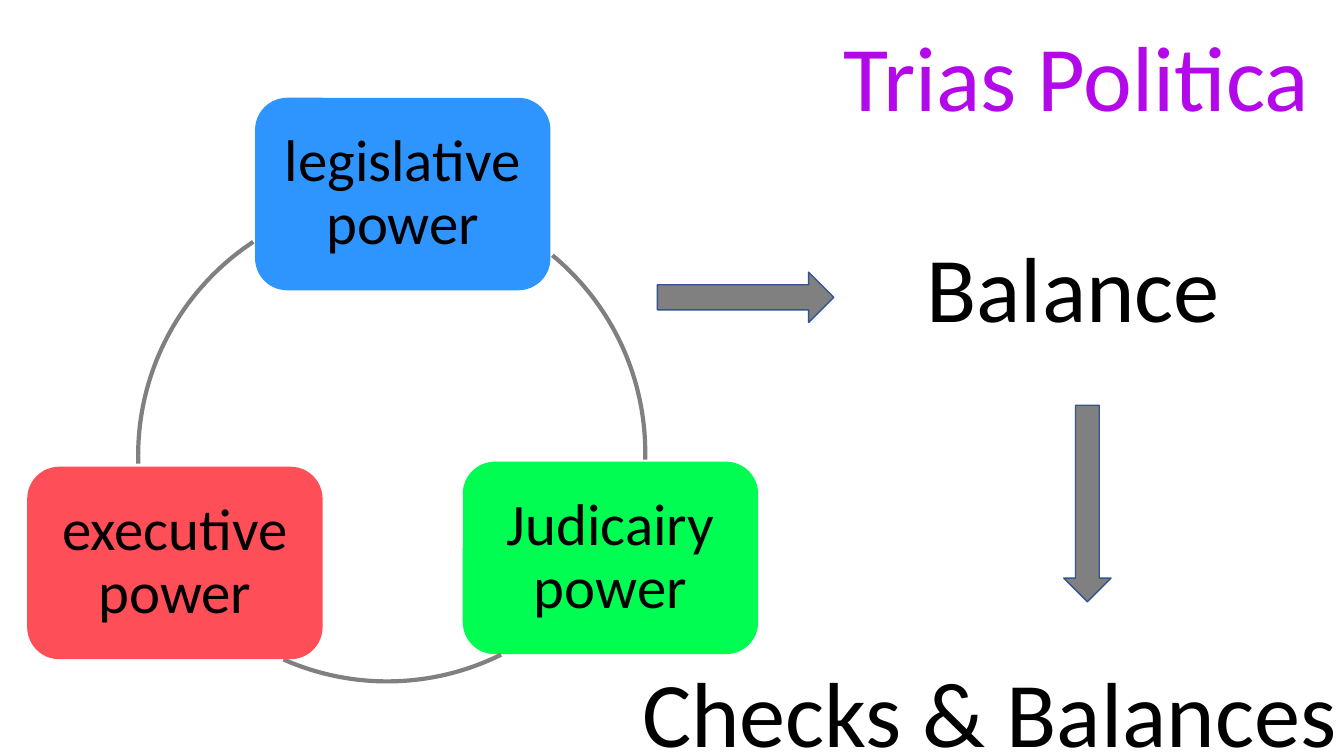
from dataclasses import dataclass

from pptx import Presentation
from pptx.dml.color import RGBColor
from pptx.enum.shapes import MSO_SHAPE
from pptx.enum.text import MSO_ANCHOR, MSO_AUTO_SIZE, PP_ALIGN
from pptx.util import Inches, Pt

ROUNDED = MSO_SHAPE.ROUNDED_RECTANGLE
ARC = MSO_SHAPE.ARC
RIGHT_ARROW = MSO_SHAPE.RIGHT_ARROW
DOWN_ARROW = MSO_SHAPE.DOWN_ARROW
MIDDLE = MSO_ANCHOR.MIDDLE
NO_AUTOFIT = MSO_AUTO_SIZE.NONE
GROW = MSO_AUTO_SIZE.SHAPE_TO_FIT_TEXT
LEFT = PP_ALIGN.LEFT
CENTER = PP_ALIGN.CENTER


@dataclass(frozen=True)
class Theme:
    font: str = "Calibri"
    title: str = "B308EA"
    text: str = "000000"
    grey: str = "808080"
    outline: str = "325491"
    legislative: str = "2E95FF"
    judiciary: str = "00FD52"
    executive: str = "FE4E57"
    large: int = 66
    medium: int = 42


class PowersSlide:
    power_size = (2.93, 1.91)
    power_inset = Inches(0.17)
    ring_diameter = 5.08

    def __init__(self, deck, theme):
        self.theme = theme
        self.page = deck.slides.add_slide(deck.slide_layouts[5])

    def set_text(self, frame, text, size, color, align=LEFT, spacing=1.0):
        frame.word_wrap = True
        para = frame.paragraphs[0]
        para.text = text
        para.alignment = align
        para.line_spacing = spacing
        para.font.name = self.theme.font
        para.font.size = Pt(size)
        para.font.color.rgb = RGBColor.from_string(color)

    def shape(self, kind, left, top, width, height, fill=None, line=None, weight=1):
        shape = self.page.shapes.add_shape(
            kind, Inches(left), Inches(top), Inches(width), Inches(height))
        shape.shadow.inherit = False
        if fill:
            shape.fill.solid()
            shape.fill.fore_color.rgb = RGBColor.from_string(fill)
        else:
            shape.fill.background()
        if line:
            shape.line.color.rgb = RGBColor.from_string(line)
            shape.line.width = Pt(weight)
        else:
            shape.line.fill.background()
        return shape

    def title(self, text, left, top, width, height):
        title = self.page.shapes.title
        title.left, title.top = Inches(left), Inches(top)
        title.width, title.height = Inches(width), Inches(height)
        frame = title.text_frame
        frame.auto_size = NO_AUTOFIT
        frame.vertical_anchor = MIDDLE
        self.set_text(frame, text, self.theme.large, self.theme.title, spacing=0.9)

    def power(self, text, left, top, fill):
        frame = self.shape(ROUNDED, left, top, *self.power_size, fill=fill).text_frame
        frame.vertical_anchor = MIDDLE
        frame.margin_left = frame.margin_right = self.power_inset
        frame.margin_top = frame.margin_bottom = self.power_inset
        self.set_text(frame, text, self.theme.medium, self.theme.text, CENTER, 0.9)

    def arc(self, left, top, start, end):
        arc = self.shape(ARC, left, top, self.ring_diameter, self.ring_diameter,
                         line=self.theme.grey, weight=3)
        for index, degrees in enumerate((start, end)):
            arc.adjustments[index] = degrees * 60000 / 100000

    def arrow(self, kind, left, top, width, height):
        self.shape(kind, left, top, width, height, self.theme.grey, self.theme.outline)

    def label(self, text, left, top, width, height):
        box = self.page.shapes.add_textbox(
            Inches(left), Inches(top), Inches(width), Inches(height))
        box.text_frame.auto_size = GROW
        self.set_text(box.text_frame, text, self.theme.large, self.theme.text)


def main():
    deck = Presentation()
    deck.slide_width, deck.slide_height = Inches(13.33), Inches(7.5)
    theme = Theme()
    slide = PowersSlide(deck, theme)

    slide.title("Trias Politica", 8.27, -0.02, 5.05, 1.65)

    cycle = [
        (("legislative power", 2.53, 0.97, theme.legislative), (1.32, 1.95, 309.6, 1.6)),
        (("Judicairy power", 4.59, 4.58, theme.judiciary), (1.3, 1.68, 63.6, 113.9)),
        (("executive power", 0.27, 4.63, theme.executive), (1.37, 1.98, 178.2, 236.6)),
    ]
    for power, arc in cycle:
        slide.power(*power)
        slide.arc(*arc)

    slide.label("Balance", 9.09, 2.23, 3.58, 1.21)
    slide.arrow(RIGHT_ARROW, 6.52, 2.7, 1.75, 0.5)
    slide.arrow(DOWN_ARROW, 10.55, 4.02, 0.47, 1.95)
    slide.label("Checks & Balances", 6.27, 6.45, 7.16, 1.21)

    deck.save("out.pptx")


if __name__ == "__main__":
    main()
